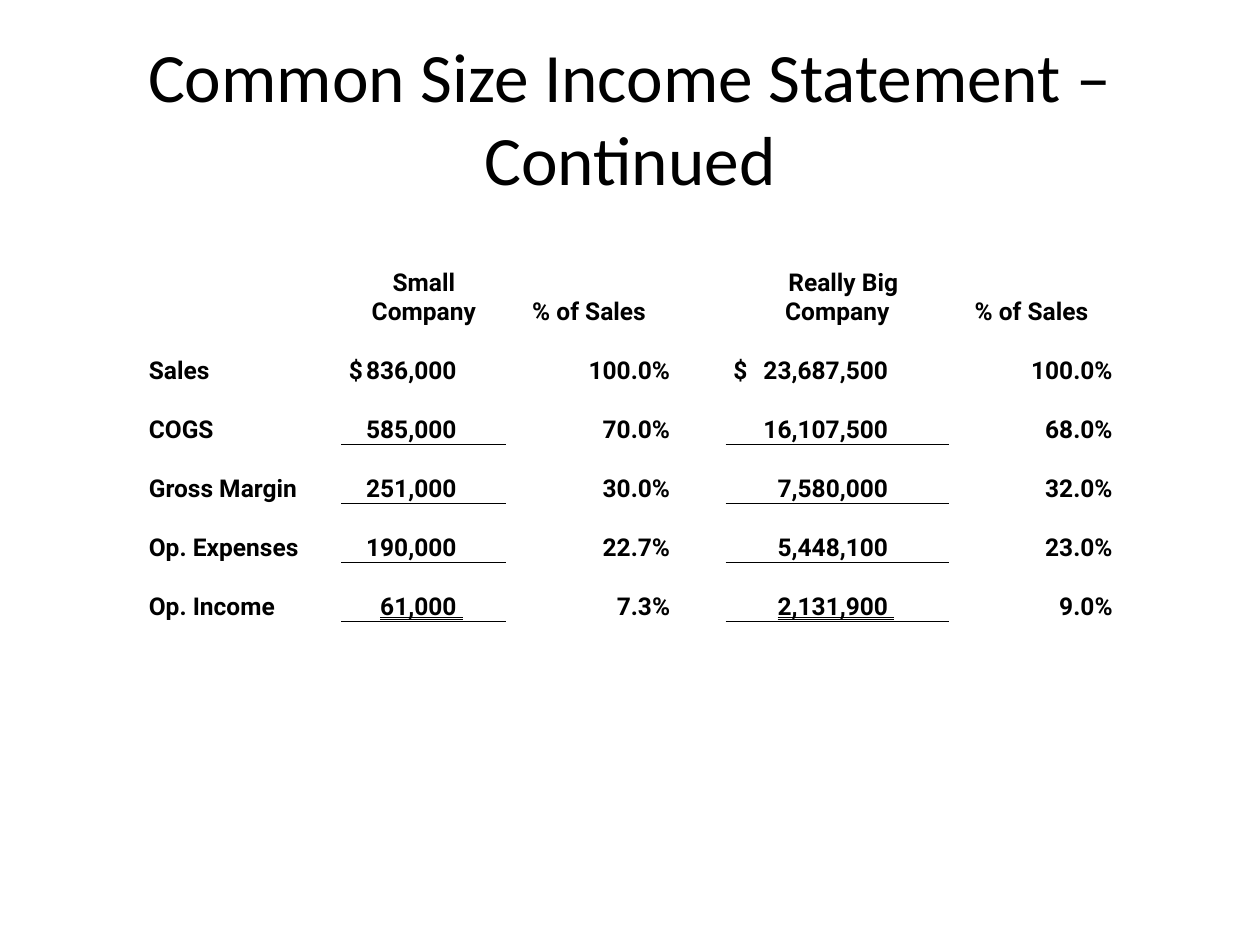
from pptx import Presentation
from pptx.dml.color import RGBColor
from pptx.enum.text import MSO_ANCHOR, PP_ALIGN
from pptx.oxml import parse_xml
from pptx.oxml.ns import nsdecls
from pptx.util import Cm, Pt

BLACK = RGBColor(0, 0, 0)
NO_STYLE = "{2D5ABB26-0587-4C30-8999-92F81FD0307C}"
INSETS = {"margin_left": Cm(0.03), "margin_right": Cm(0.03),
          "margin_top": Cm(0.03), "margin_bottom": Cm(0),
          "vertical_anchor": MSO_ANCHOR.BOTTOM}
TITLE_FONT = {"name": "Calibri", "size": Pt(39.6)}
BODY_FONT = {"name": "Roboto", "size": Pt(14), "bold": True}


def apply_format(target, values):
    for name, value in values.items():
        setattr(target, name, value)


def add_rule(cell, side):
    cell._tc.get_or_add_tcPr().insert(0, parse_xml(
        f'<a:{side} {nsdecls("a")} w="6350"><a:solidFill>'
        f'<a:srgbClr val="{BLACK}"/></a:solidFill></a:{side}>'))


deck = Presentation()
apply_format(deck, {"slide_width": Cm(25.4), "slide_height": Cm(19.05)})
slide = deck.slides.add_slide(deck.slide_layouts[6])

heading = slide.shapes.add_textbox(Cm(1.27), Cm(0.76), Cm(22.86), Cm(3.18)).text_frame
apply_format(heading, {"word_wrap": True, "vertical_anchor": MSO_ANCHOR.MIDDLE})
heading.paragraphs[0].alignment = PP_ALIGN.CENTER
heading_run = heading.paragraphs[0].add_run()
heading_run.text = "Common Size Income Statement – Continued"
apply_format(heading_run.font, TITLE_FONT)
heading_run.font.color.rgb = BLACK

statement = [
    ["", "Small Company", "% of Sales", "", "Really Big Company", "% of Sales"],
    ["Sales", " $\t836,000 ", "100.0%", "", " $\t23,687,500 ", "100.0%"],
    ["COGS", "\t585,000 ", "70.0%", "", "\t16,107,500 ", "68.0%"],
    ["Gross Margin", "\t251,000 ", "30.0%", "", "\t7,580,000 ", "32.0%"],
    ["Op. Expenses", "\t190,000 ", "22.7%", "", "\t5,448,100 ", "23.0%"],
    ["Op. Income", "\t61,000 ", "7.3%", "", "\t2,131,900 ", "9.0%"],
    [""] * 6,
]
column_widths = [3.91, 3.33, 3.33, 1.09, 4.5, 3.33]
row_heights = [1.7] + [1.19] * 5 + [0.61]
amount_stops = {1: Cm(2.42), 4: Cm(3.37)}
percent_columns = (2, 5)
subtotal_rows = (2, 4)
income_row = 5

frame = slide.shapes.add_table(len(row_heights), len(column_widths), Cm(2.97), Cm(4.88),
                               Cm(sum(column_widths)), Cm(sum(row_heights)))
table = frame.table
apply_format(table, {"first_row": False, "horz_banding": False})
table._tbl.tblPr[0].text = NO_STYLE
for column, width in zip(table.columns, column_widths):
    column.width = Cm(width)
for row, height in zip(table.rows, row_heights):
    row.height = Cm(height)

for r, entries in enumerate(statement):
    for c, entry in enumerate(entries):
        cell = table.cell(r, c)
        apply_format(cell, INSETS)
        cell.fill.background()
        paragraph = cell.text_frame.paragraphs[0]
        if not entry:
            paragraph._p.append(parse_xml(f'<a:endParaRPr {nsdecls("a")} sz="1400"/>'))
            continue
        run = paragraph.add_run()
        run.text = entry
        apply_format(run.font, BODY_FONT)
        run.font.color.rgb = BLACK
        if r == 0:
            paragraph.alignment = PP_ALIGN.CENTER
            if c == 4:
                paragraph._p.get_or_add_pPr().set("indent", str(Cm(0.24)))
        elif c in percent_columns:
            paragraph.alignment = PP_ALIGN.RIGHT
        elif c in amount_stops:
            paragraph._p.get_or_add_pPr().append(parse_xml(
                f'<a:tabLst {nsdecls("a")}><a:tab pos="{amount_stops[c]}" algn="r"/></a:tabLst>'))
            if r in subtotal_rows:
                add_rule(cell, "lnB")
            if r - 1 in subtotal_rows:
                add_rule(cell, "lnT")
            if r == income_row:
                run._r.get_or_add_rPr().set("u", "dbl")

deck.save("out.pptx")
